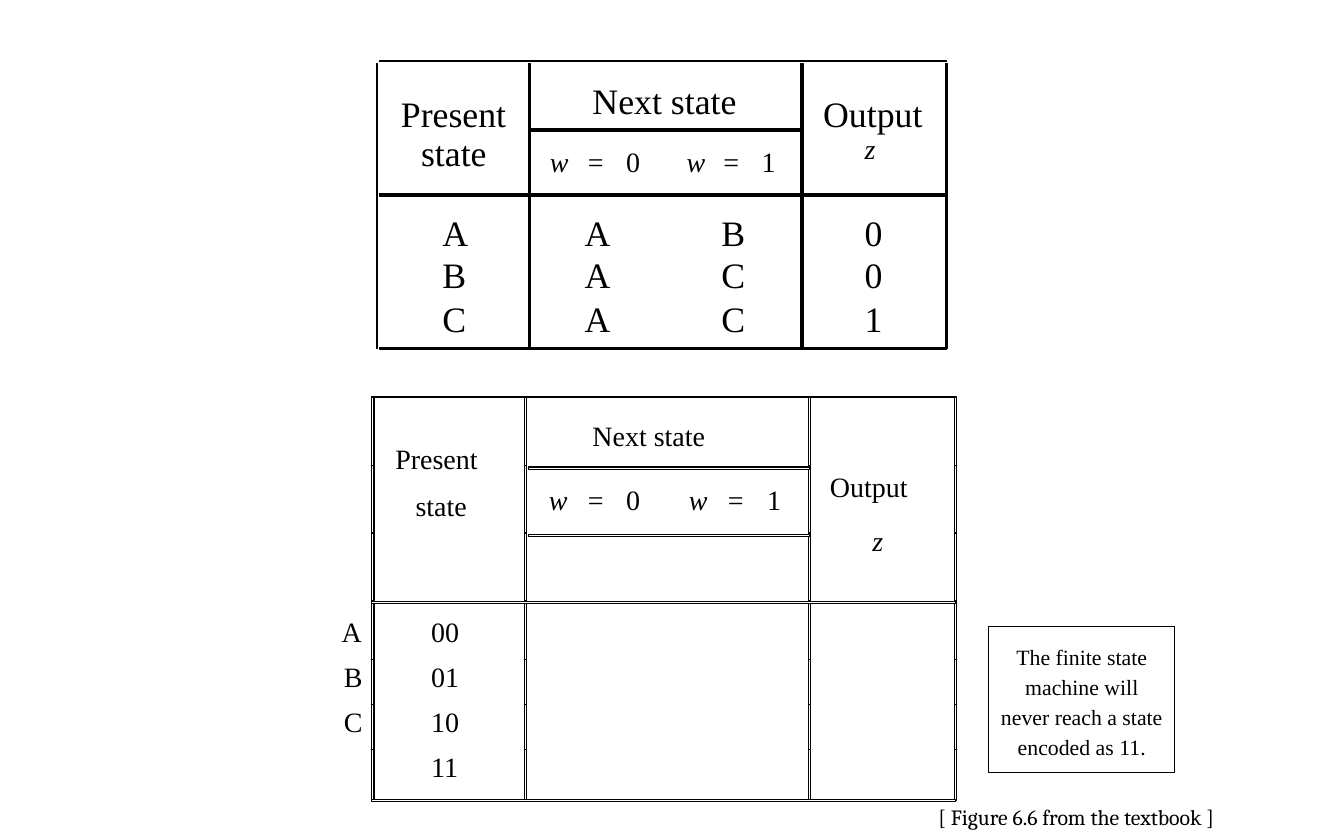
from pptx import Presentation
from pptx.dml.color import RGBColor
from pptx.enum.shapes import MSO_SHAPE
from pptx.enum.text import MSO_ANCHOR, MSO_AUTO_SIZE, PP_ALIGN
from pptx.util import Pt

PX = 9144
BLACK = RGBColor(0, 0, 0)
WHITE = RGBColor(255, 255, 255)
SERIF = "Times New Roman"
CAPTION_FONT = "Cambria"
RECTANGLE = MSO_SHAPE.RECTANGLE
MIDDLE = MSO_ANCHOR.MIDDLE
CENTER = PP_ALIGN.CENTER
FIT_SHAPE = MSO_AUTO_SIZE.SHAPE_TO_FIT_TEXT


def px(*lengths):
    return [length * PX for length in lengths]


def set_font(para, size, name=SERIF, italic=False):
    para.font.size = Pt(size)
    para.font.name = name
    para.font.italic = italic
    para.font.color.rgb = BLACK


def add_rect(page, x, y, width, height, fill=None):
    rect = page.shapes.add_shape(RECTANGLE, *px(x, y, width, height))
    rect.shadow.inherit = False
    if fill is None:
        rect.fill.background()
    else:
        rect.fill.solid()
        rect.fill.fore_color.rgb = fill
    rect.line.color.rgb = BLACK
    rect.line.width = Pt(0.75)
    return rect


def add_rules(page, columns, row_tops, bars, fill):
    for top, bottom in zip(row_tops, row_tops[1:]):
        for x, width in columns:
            add_rect(page, x, top, width, bottom - top, fill)
    for bar in bars:
        add_rect(page, *bar, fill)


def add_label(page, text, x, y, width, height, size, italic=False):
    box = page.shapes.add_textbox(*px(x, y, width, height))
    frame = box.text_frame
    frame.word_wrap = True
    frame.margin_left = frame.margin_right = 0
    frame.margin_top = frame.margin_bottom = 0
    para = frame.paragraphs[0]
    para.text = text
    set_font(para, size, italic=italic)


def add_inputs(page, lefts, widths, y, height):
    for value, starts in zip("01", lefts):
        for text, x, width in zip(("w", "=", value), starts, widths):
            add_label(page, text, x, y, width, height, 18, text == "w")


def add_state_table(page):
    columns = [(336, 1), (472, 2), (715, 2), (844, 2)]
    bars = [(339, 54, 506, 1), (472, 115, 244, 2),
            (339, 173, 506, 2), (339, 310, 506, 2)]
    add_rules(page, columns, [57, 117, 176, 227, 266, 311], bars, BLACK)

    add_label(page, "Present", 358, 82, 120, 45, 23)
    add_label(page, "state", 376, 117, 83, 45, 23)
    add_label(page, "Next state", 529, 70, 137, 38, 23)
    add_label(page, "Output", 735, 82, 106, 45, 23)
    add_label(page, "z", 772, 117, 21, 40, 18, True)
    add_inputs(page, [(491, 525, 559), (613, 646, 680)], (31, 27, 25), 129, 40)

    for y, states in zip((188, 226, 265), ("AAB0", "BAC0", "CAC1")):
        for x, state in zip((395, 522, 644, 772), states):
            add_label(page, state, x, y, 45, 45, 23)


def add_encoded_table(page):
    columns = [(332, 2), (468, 2), (722, 2), (852, 2)]
    bars = [(332, 354, 521, 1), (472, 417, 251, 2), (472, 477, 251, 2),
            (332, 537, 521, 2), (332, 714, 521, 2)]
    add_rules(page, columns, [354, 416, 476, 536, 589, 629, 669, 715], bars, WHITE)

    add_label(page, "Present", 353, 394, 80, 30, 18)
    add_label(page, "state", 371, 436, 52, 30, 18)
    add_label(page, "Next state", 529, 374, 107, 30, 18)
    add_label(page, "Output", 741, 419, 90, 30, 18)
    add_label(page, "z", 779, 467, 16, 30, 18, True)
    add_inputs(page, [(490, 525, 559), (615, 650, 685)], (23, 20, 19), 431, 30)

    for row, code in enumerate(("00", "01", "10", "11")):
        add_label(page, code, 385, 549 + 40 * row, 26, 30, 18)
    for row, (state, x) in enumerate((("A", 305), ("B", 307), ("C", 307))):
        add_label(page, state, x, 549 + 40 * row, 24, 30, 18)


def add_note(page):
    note = add_rect(page, 883, 559, 166, 131)
    frame = note.text_frame
    frame.word_wrap = True
    frame.vertical_anchor = MIDDLE
    frame.margin_left = frame.margin_right = 10 * PX
    frame.margin_top = frame.margin_bottom = 10 * PX
    para = frame.paragraphs[0]
    para.text = "The finite state machine will never reach a state encoded as 11."
    para.alignment = CENTER
    para.line_spacing = 1.15
    set_font(para, 14)


def add_caption(page):
    box = page.shapes.add_textbox(*px(828, 713, 269, 34))
    frame = box.text_frame
    frame.word_wrap = False
    frame.auto_size = FIT_SHAPE
    para = frame.paragraphs[0]
    para.text = "[ Figure 6.6 from the textbook ]"
    set_font(para, 14, CAPTION_FONT)


def main():
    deck = Presentation()
    deck.slide_width, deck.slide_height = px(1200, 750)
    page = deck.slides.add_slide(deck.slide_layouts[6])
    add_state_table(page)
    add_encoded_table(page)
    add_note(page)
    add_caption(page)
    deck.save("out.pptx")


if __name__ == "__main__":
    main()
